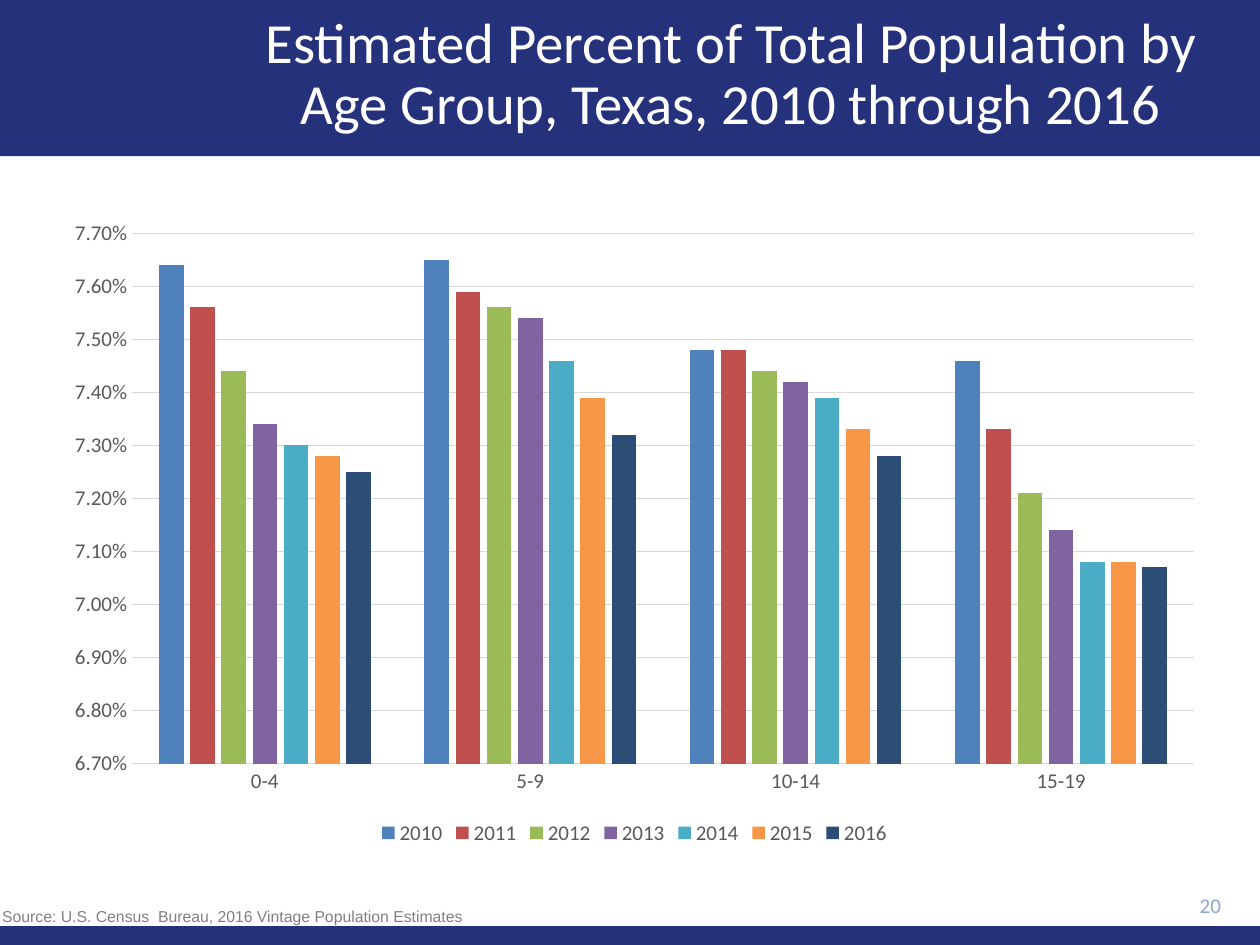
"""Build a slide charting the shares of young age groups in Texas, 2010 to 2016."""
from dataclasses import dataclass

import pptx
import pptx.chart.data
import pptx.dml.color
import pptx.enum.chart
import pptx.enum.shapes
import pptx.enum.text
import pptx.util

Pt = pptx.util.Pt
ALIGN = pptx.enum.text.PP_ALIGN
ANCHOR = pptx.enum.text.MSO_ANCHOR
AUTO = pptx.enum.text.MSO_AUTO_SIZE


@dataclass(frozen=True)
class Theme:
    band: str = "25327B"
    title: str = "FFFFFF"
    label: str = "595959"
    grid: str = "D9D9D9"
    number: str = "8FA5D1"
    source: str = "808080"
    series: tuple = ("4F81BD", "C0504D", "9BBB59", "8064A2", "4BACC6", "F79646", "2C4D75")
    font: str = "Calibri"
    source_font: str = "Arial"
    title_size: float = 32.4
    label_size: float = 12
    source_size: float = 9


class Builder:
    def __init__(self, s, theme):
        self.s = s
        self.t = theme

    def rgb(self, color):
        return pptx.dml.color.RGBColor.from_string(color)

    def style(self, font, size, color, name=None):
        font.name = name or self.t.font
        font.size = Pt(size)
        font.color.rgb = self.rgb(color)

    def line(self, fmt):
        fmt.line.color.rgb = self.rgb(self.t.grid)
        fmt.line.width = Pt(0.75)

    def band(self, top, height):
        sp = self.s.shapes.add_shape(
            pptx.enum.shapes.MSO_SHAPE.RECTANGLE, 0, Pt(top), Pt(720), Pt(height))
        sp.shadow.inherit = False
        sp.fill.solid()
        sp.fill.fore_color.rgb = self.rgb(self.t.band)
        sp.line.fill.background()

    def fill_text(self, sp, text, size, color, align, anchor, spacing=None, name=None,
                  auto=AUTO.NONE):
        tf = sp.text_frame
        tf.word_wrap = True
        tf.auto_size = auto
        tf.vertical_anchor = anchor
        p = tf.paragraphs[0]
        p.alignment = align
        p.line_spacing = spacing
        r = p.add_run()
        r.text = text
        self.style(r.font, size, color, name)

    def title(self, text, box):
        sp = self.s.shapes.title
        self.s.shapes.element.append(sp.element)
        sp.left, sp.top, sp.width, sp.height = map(Pt, box)
        self.fill_text(sp, text, self.t.title_size, self.t.title, ALIGN.CENTER, ANCHOR.MIDDLE, 0.9)

    def text(self, text, box, *args, **kwargs):
        sp = self.s.shapes.add_textbox(*map(Pt, box))
        self.fill_text(sp, text, *args, **kwargs)

    def columns(self, box, cats, series):
        data = pptx.chart.data.CategoryChartData(number_format="0.00%")
        data.categories = cats
        for name, percents in series.items():
            data.add_series(name, [round(v / 100, 4) for v in percents])
        kind = pptx.enum.chart.XL_CHART_TYPE.COLUMN_CLUSTERED
        chart = self.s.shapes.add_chart(kind, *map(Pt, box), data).chart
        chart.has_title = False
        self.style(chart.font, self.t.label_size, self.t.label)

        plot = chart.plots[0]
        plot.gap_width = 219
        plot.overlap = -27
        plot.vary_by_categories = False
        for ser, color in zip(plot.series, self.t.series):
            ser.format.fill.solid()
            ser.format.fill.fore_color.rgb = self.rgb(color)
            ser.invert_if_negative = False

        for axis in (chart.category_axis, chart.value_axis):
            axis.major_tick_mark = axis.minor_tick_mark = pptx.enum.chart.XL_TICK_MARK.NONE
            self.style(axis.tick_labels.font, self.t.label_size, self.t.label)
        self.line(chart.category_axis.format)
        axis = chart.value_axis
        axis.minimum_scale, axis.maximum_scale, axis.major_unit = 0.067, 0.077, 0.001
        axis.tick_labels.number_format = "0.00%"
        axis.tick_labels.number_format_is_linked = False
        axis.format.line.fill.background()
        self.line(axis.major_gridlines.format)

        chart.has_legend = True
        chart.legend.position = pptx.enum.chart.XL_LEGEND_POSITION.BOTTOM
        chart.legend.include_in_layout = False
        self.style(chart.legend.font, self.t.label_size, self.t.label)


def main():
    prs = pptx.Presentation()
    prs.slide_width, prs.slide_height = Pt(720), Pt(540)
    t = Theme()
    b = Builder(prs.slides.add_slide(prs.slide_layouts[5]), t)
    b.band(0, 89.3)
    b.band(529.2, 10.8)
    b.title("Estimated Percent of Total Population by Age Group, Texas, 2010 through 2016",
            (122.4, 7.2, 590.4, 72))
    b.columns((29.5, 118.8, 666, 367.2), ("0-4", "5-9", "10-14", "15-19"), {
        "2010": (7.64, 7.65, 7.48, 7.46),
        "2011": (7.56, 7.59, 7.48, 7.33),
        "2012": (7.44, 7.56, 7.44, 7.21),
        "2013": (7.34, 7.54, 7.42, 7.14),
        "2014": (7.30, 7.46, 7.39, 7.08),
        "2015": (7.28, 7.39, 7.33, 7.08),
        "2016": (7.25, 7.32, 7.28, 7.07),
    })
    b.text("20", (640.8, 504.7, 64, 24.5), t.label_size, t.number, ALIGN.RIGHT, ANCHOR.MIDDLE)
    b.text("Source: U.S. Census  Bureau, 2016 Vintage Population Estimates",
           (-5.8, 514, 360, 18.7), t.source_size, t.source, ALIGN.LEFT, ANCHOR.TOP,
           spacing=1.07, name=t.source_font, auto=AUTO.SHAPE_TO_FIT_TEXT)
    prs.save("out.pptx")


if __name__ == "__main__":
    main()
